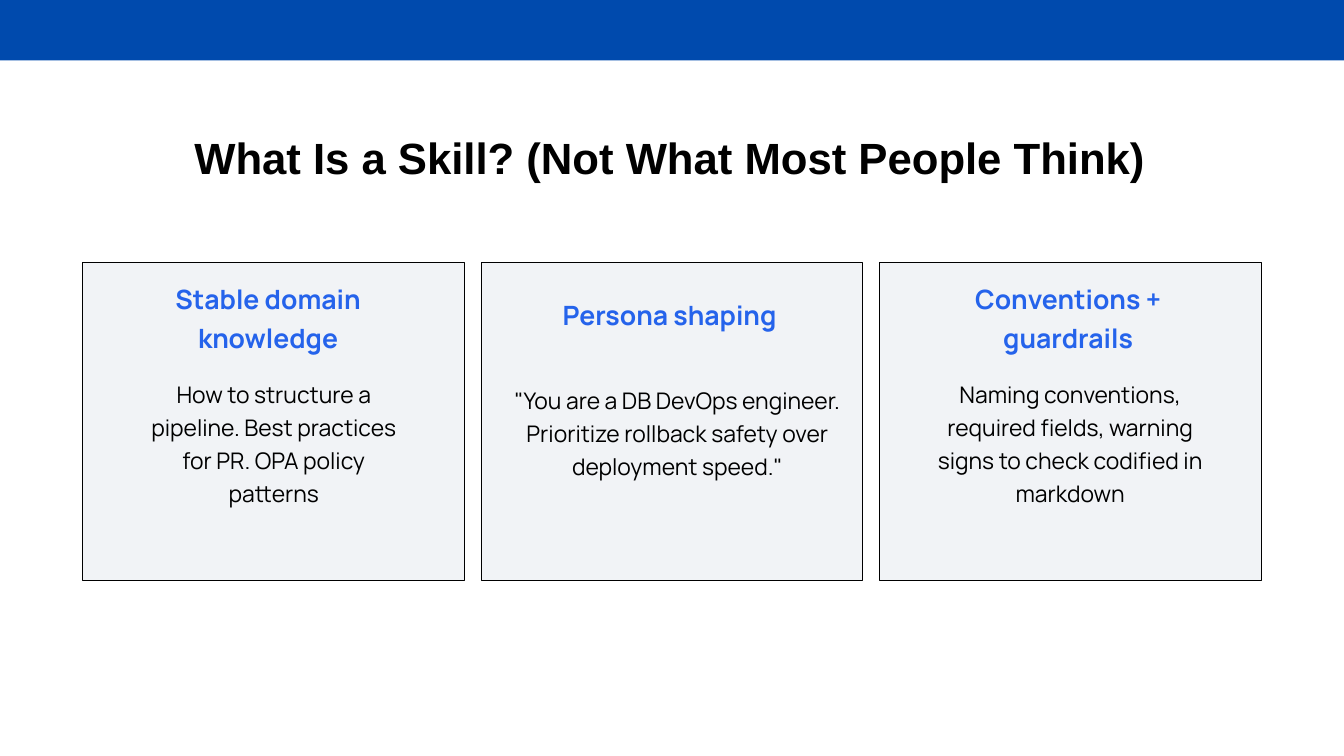
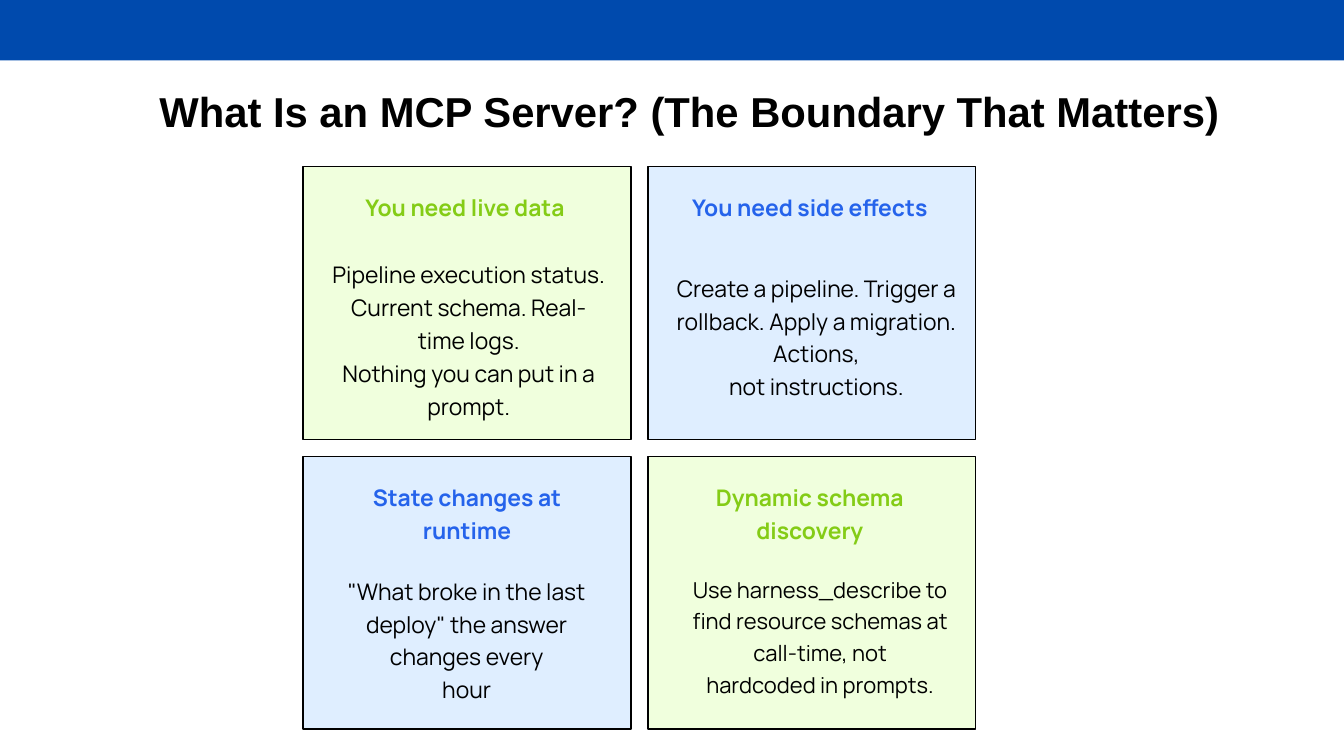
from collections import namedtuple

from pptx import Presentation
from pptx.dml.color import RGBColor
from pptx.enum.shapes import MSO_SHAPE as Shape
from pptx.enum.text import MSO_ANCHOR as Anchor, MSO_AUTO_SIZE as AutoSize, PP_ALIGN as Align
from pptx.util import Emu, Pt

PX = 9144  # EMU in one px: 100 px to the inch
SLIDE_WIDTH, SLIDE_HEIGHT = 2000, 1125
BAND_HEIGHT = 90
TITLE_ONLY = 5

COLORS = {
    "band": "004AAD",
    "black": "000000",
    "blue": "2563EB",
    "green": "84CC16",
    "grey_fill": "F1F3F6",
    "blue_fill": "DFEEFF",
    "green_fill": "F0FFDD",
}

Box = namedtuple("Box", "left top width height")
# Head and body boxes are measured from the card's top left corner.
Card = namedtuple("Card", "accent fill head_box head body_box body body_size", defaults=(24.5,))

SKILL_CARDS = [
    Card("blue", "grey_fill",
         Box(123, 21, 306, 106), ["Stable domain", "knowledge"],
         Box(82, 168, 405, 166),
         ["How to structure a pipeline. Best practices for PR. OPA policy patterns"]),
    Card("blue", "grey_fill",
         Box(109, 44, 343, 48), ["Persona shaping"],
         Box(43, 177, 498, 166),
         ['"You are a DB DevOps engineer. Prioritize rollback safety over',
          'deployment speed."']),
    Card("blue", "grey_fill",
         Box(134, 21, 293, 106), ["Conventions +", "guardrails"],
         Box(58, 168, 451, 166),
         ["Naming conventions, required fields, warning signs to check codified in markdown"]),
]

SERVER_CARDS = [
    Card("green", "green_fill",
         Box(80, 32, 322, 43), ["You need live data"],
         Box(39, 132, 415, 204),
         ["Pipeline execution status. Current schema. Real-time logs.",
          "Nothing you can put in a prompt."]),
    Card("blue", "blue_fill",
         Box(56, 32, 370, 43), ["You need side effects"],
         Box(37, 152, 428, 164),
         ["Create a pipeline. Trigger a rollback. Apply a migration. Actions,",
          "not instructions."]),
    Card("blue", "blue_fill",
         Box(92, 32, 304, 84), ["State changes at", "runtime"],
         Box(50, 172, 387, 164),
         ['"What broke in the last deploy" the answer changes every', "hour"]),
    Card("green", "green_fill",
         Box(83, 32, 316, 84), ["Dynamic schema", "discovery"],
         Box(48, 171, 417, 157),
         ["Use harness_describe to find resource schemas at call-time, not",
          "hardcoded in prompts."], 23.5),
]


def to_emu(box):
    return [Emu(length * PX) for length in box]


def color(name):
    return RGBColor.from_string(COLORS[name])


def write(shape, lines, *, size, font="Manrope", ink="black", bold=False):
    frame = shape.text_frame
    frame.word_wrap = True
    frame.auto_size = AutoSize.NONE
    frame.vertical_anchor = Anchor.TOP
    frame.margin_left = frame.margin_top = frame.margin_right = frame.margin_bottom = 0
    for index, line in enumerate(lines):
        para = frame.add_paragraph() if index else frame.paragraphs[0]
        para.alignment = Align.CENTER
        para.line_spacing = 1.2
        para.space_before = Pt(0)
        span = para.add_run()
        span.text = line
        span.font.name = font
        span.font.size = Pt(size)
        span.font.bold = bold
        span.font.color.rgb = color(ink)


def add_panel(page, box, fill, line_width=0):
    panel = page.shapes.add_shape(Shape.RECTANGLE, *to_emu(box))
    panel.shadow.inherit = False
    panel.fill.solid()
    panel.fill.fore_color.rgb = color(fill)
    if line_width:
        panel.line.color.rgb = color("black")
        panel.line.width = Pt(line_width)
    else:
        panel.line.fill.background()


def add_page(deck, title, title_box, title_size):
    """Add a slide with the top band and its title."""
    page = deck.slides.add_slide(deck.slide_layouts[TITLE_ONLY])
    add_panel(page, Box(0, 0, SLIDE_WIDTH, BAND_HEIGHT), "band")
    heading = page.shapes.title
    heading.left, heading.top, heading.width, heading.height = to_emu(title_box)
    write(heading, [title], size=title_size, font="Arial", bold=True)
    return page


def add_card(page, box, card, head_size, line_width):
    def add_text(inner, lines, **style):
        place = inner._replace(left=box.left + inner.left, top=box.top + inner.top)
        write(page.shapes.add_textbox(*to_emu(place)), lines, **style)

    add_panel(page, box, card.fill, line_width)
    add_text(card.head_box, card.head, size=head_size, ink=card.accent, bold=True)
    add_text(card.body_box, card.body, size=card.body_size)


def add_card_grid(page, first, cards, *, columns, gap, head_size, line_width):
    """Lay the cards out in rows, starting from the box of the first one."""
    for index, card in enumerate(cards):
        row, column = divmod(index, columns)
        box = first._replace(left=first.left + column * (first.width + gap),
                             top=first.top + row * (first.height + gap))
        add_card(page, box, card, head_size, line_width)


def add_skill_page(deck):
    page = add_page(deck, "What Is a Skill? (Not What Most People Think)",
                    Box(283, 179, 1428, 78), 46.8)
    add_card_grid(page, Box(123, 391, 568, 472), SKILL_CARDS,
                  columns=3, gap=25, head_size=28.5, line_width=0.75)


def add_server_page(deck):
    page = add_page(deck, "What Is an MCP Server? (The Boundary That Matters)",
                    Box(225, 112, 1602, 74), 44.8)
    add_card_grid(page, Box(451, 248, 488, 406), SERVER_CARDS,
                  columns=2, gap=25, head_size=24.5, line_width=1.5)


def main():
    deck = Presentation()
    deck.slide_width, deck.slide_height = to_emu((SLIDE_WIDTH, SLIDE_HEIGHT))
    add_skill_page(deck)
    add_server_page(deck)
    deck.save("out.pptx")


if __name__ == "__main__":
    main()
